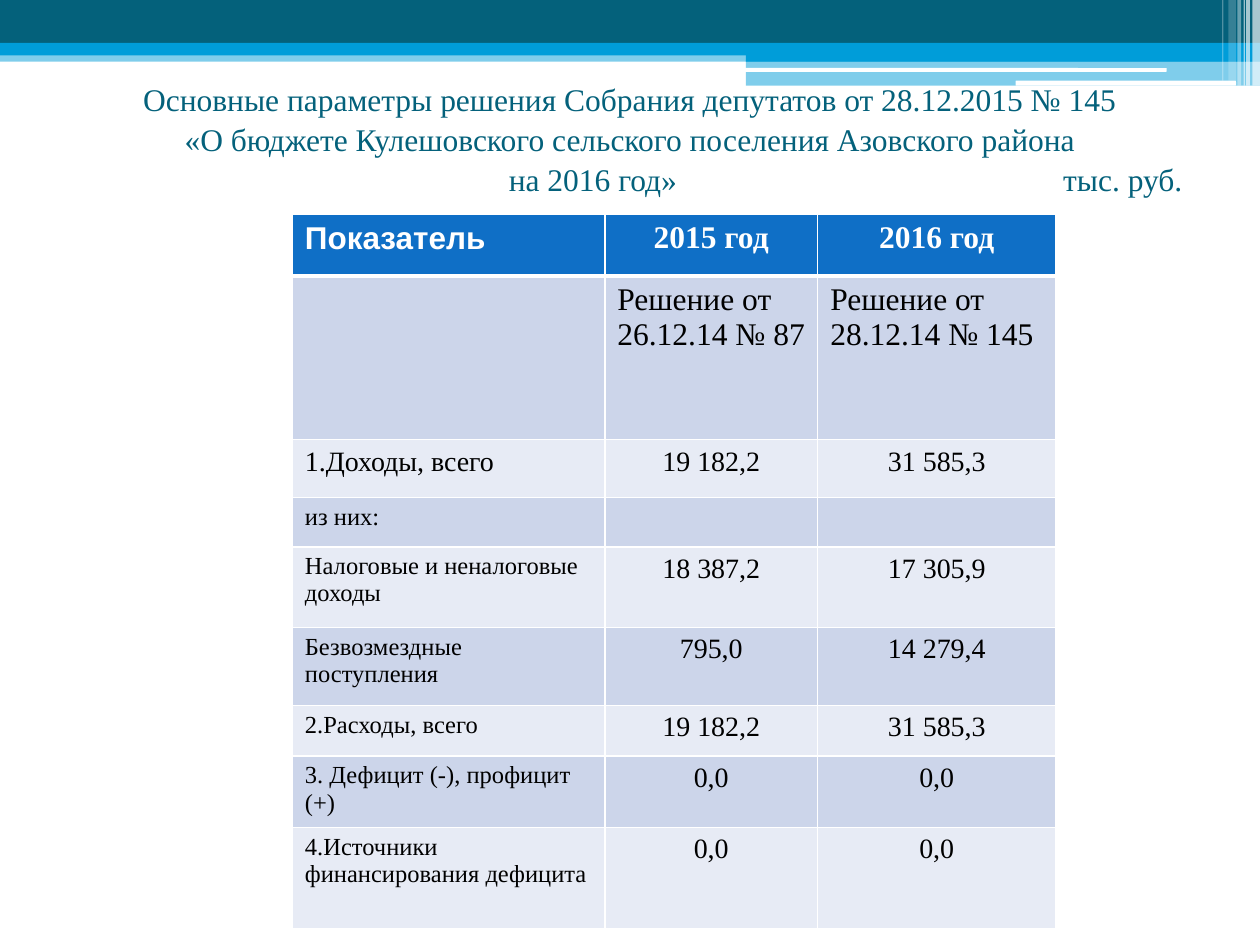
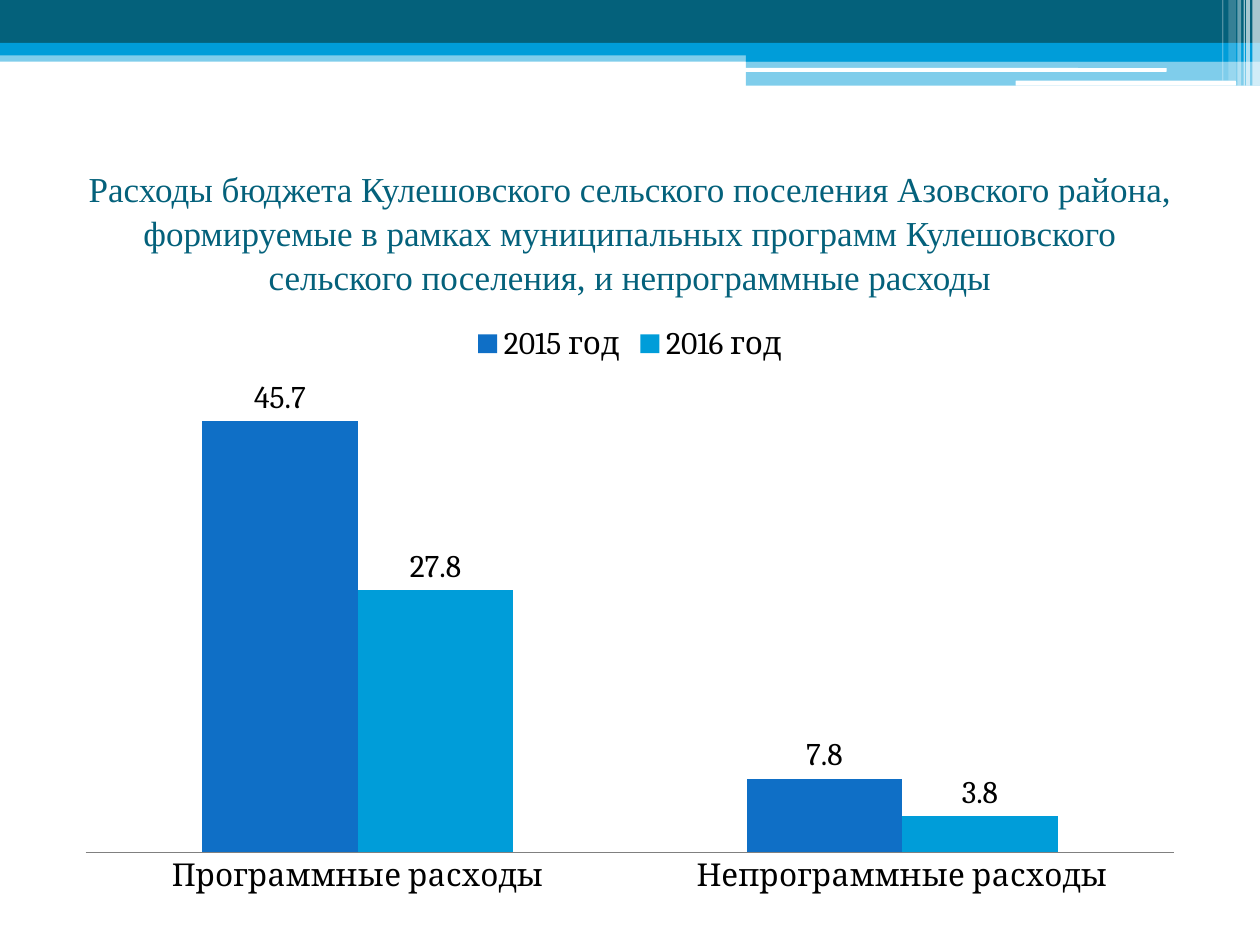
from lxml import etree
from pptx import Presentation
from pptx.chart.data import CategoryChartData
from pptx.dml.color import RGBColor
from pptx.enum.chart import (XL_CHART_TYPE, XL_LABEL_POSITION, XL_LEGEND_POSITION,
                             XL_TICK_MARK)
from pptx.enum.shapes import MSO_SHAPE
from pptx.enum.text import MSO_ANCHOR, PP_ALIGN
from pptx.oxml.ns import qn
from pptx.util import Inches, Pt

TEAL = RGBColor(0x04, 0x61, 0x7B)
SKY = RGBColor(0x00, 0x9D, 0xD9)
BLUE = RGBColor(0x0F, 0x6F, 0xC6)
DARK_ROW = RGBColor(0xCC, 0xD5, 0xEA)
LIGHT_ROW = RGBColor(0xE7, 0xEB, 0xF5)
AXIS_GRAY = RGBColor(0x80, 0x80, 0x80)
WHITE = RGBColor(0xFF, 0xFF, 0xFF)
BLACK = RGBColor(0x00, 0x00, 0x00)
SERIF = "Times New Roman"

# left, top, width, height, colour, opacity in percent
BANDS = [
    (0, 0.4, 10, 0.09, SKY, 50),
    (0, 0, 10, 0.34, TEAL, 100),
    (0, 0.34, 10, 0.1, SKY, 100),
    (5.92, 0.39, 4.08, 0.1, SKY, 100),
    (5.92, 0.48, 4.08, 0.2, SKY, 50),
]
WHITE_BARS = [(5.91, 0.54, 3.35, 0.03), (8.06, 0.64, 1.75, 0.04)]
# left, width, height, opacity in percent
STRIPES = [
    (9.94, 0.06, 0.68, 65),
    (9.89, 0.03, 0.68, 65),
    (9.87, 0.01, 0.68, 60),
    (9.82, 0.03, 0.68, 40),
    (9.75, 0.06, 0.64, 20),
    (9.7, 0.01, 0.64, 30),
]

BUDGET_TITLE = [
    "Основные параметры решения Собрания депутатов от 28.12.2015 № 145",
    "«О бюджете Кулешовского сельского поселения Азовского района",
    "\tна 2016 год»\tтыс. руб.",
]
UNIT_LINE_TABS = [3.44, 7.84]
COLUMN_WIDTHS = [2.48, 1.69, 1.89]
# row height, label size, cell texts
BUDGET_ROWS = [
    (0.49, 18, ["Показатель", "2015 год", "2016 год"]),
    (1.3, 18, ["", "Решение от 26.12.14 № 87", "Решение от 28.12.14 № 145"]),
    (0.46, 16, ["1.Доходы, всего", "19 182,2", "31 585,3"]),
    (0.39, 14, ["из них:", "", ""]),
    (0.64, 14, ["Налоговые и неналоговые доходы", "18 387,2", "17 305,9"]),
    (0.62, 14, ["Безвозмездные поступления", "795,0", "14 279,4"]),
    (0.4, 14, ["2.Расходы, всего", "19 182,2", "31 585,3"]),
    (0.57, 14, ["3. Дефицит (-), профицит (+)", "0,0", "0,0"]),
    (0.8, 14, ["4.Источники финансирования дефицита", "0,0", "0,0"]),
]

EXPENSES_TITLE = [
    "Расходы бюджета Кулешовского сельского поселения Азовского района, "
    "формируемые в рамках муниципальных программ Кулешовского сельского "
    "поселения, и непрограммные расходы"
]
EXPENSE_KINDS = ["Программные расходы", "Непрограммные расходы"]
EXPENSE_SERIES = [("2015 год", [45.7, 7.8], BLUE), ("2016 год", [27.8, 3.8], SKY)]


def style_font(font, size, color, name=SERIF, bold=False):
    font.size = Pt(size)
    font.name = name
    font.bold = bold
    font.color.rgb = color


def add_band(slide, left, top, width, height, color, opacity=100, kind=MSO_SHAPE.RECTANGLE):
    band = slide.shapes.add_shape(kind, Inches(left), Inches(top), Inches(width), Inches(height))
    band.shadow.inherit = False
    band.fill.solid()
    band.fill.fore_color.rgb = color
    band.line.fill.background()
    if opacity < 100:
        color_element = next(band.element.iter(qn("a:srgbClr")))
        etree.SubElement(color_element, qn("a:alpha"), val=str(opacity * 1000))


def add_header(slide):
    for band in BANDS:
        add_band(slide, *band)
    for bar in WHITE_BARS:
        add_band(slide, *bar, WHITE, kind=MSO_SHAPE.ROUNDED_RECTANGLE)
    for left, width, height, opacity in STRIPES:
        add_band(slide, left, 0, width, height, WHITE, opacity)


def add_title(slide, lines, top, height, size):
    """Add a centred title and return its text frame."""
    box = slide.shapes.add_textbox(Inches(0.5), Inches(top), Inches(9), Inches(height))
    frame = box.text_frame
    frame.word_wrap = True
    frame.vertical_anchor = MSO_ANCHOR.MIDDLE
    frame.text = "\n".join(lines)
    for paragraph in frame.paragraphs:
        paragraph.alignment = PP_ALIGN.CENTER
        paragraph.line_spacing = 1.05
        style_font(paragraph.font, size, TEAL)
    return frame


def set_tabs(paragraph, positions):
    """Left-align the paragraph and give it tab stops, in inches."""
    paragraph.alignment = PP_ALIGN.LEFT
    tabs = etree.Element(qn("a:tabLst"))
    for position in positions:
        etree.SubElement(tabs, qn("a:tab"), pos=str(Inches(position)), algn="l")
    properties = paragraph.font._element.getparent()
    properties.find(qn("a:defRPr")).addprevious(tabs)


def set_borders(cell, bottom_width):
    """Draw white borders, 1 pt but for the bottom one."""
    properties = cell._tc.get_or_add_tcPr()
    widths = {"a:lnL": 1, "a:lnR": 1, "a:lnT": 1, "a:lnB": bottom_width}
    for index, (tag, width) in enumerate(widths.items()):
        line = etree.Element(qn(tag), w=str(Pt(width)))
        fill = etree.SubElement(line, qn("a:solidFill"))
        etree.SubElement(fill, qn("a:srgbClr"), val=str(WHITE))
        properties.insert(index, line)


def fill_cell(cell, text, row, column, label_size):
    is_header = row == 0
    cell.fill.solid()
    cell.fill.fore_color.rgb = BLUE if is_header else DARK_ROW if row % 2 else LIGHT_ROW
    set_borders(cell, 3 if is_header else 1)
    cell.text = text
    paragraph = cell.text_frame.paragraphs[0]
    if column and row != 1:
        paragraph.alignment = PP_ALIGN.CENTER
    size = label_size if column == 0 else 18 if row < 2 else 16
    name = "Arial" if is_header and column == 0 else SERIF
    style_font(paragraph.font, size, WHITE if is_header else BLACK, name, is_header)


def add_budget_table(slide):
    table = slide.shapes.add_table(
        len(BUDGET_ROWS), len(COLUMN_WIDTHS),
        Inches(2.32), Inches(1.7), Inches(6.06), Inches(5.66)).table
    for column, width in zip(table.columns, COLUMN_WIDTHS):
        column.width = Inches(width)
    for row, (height, label_size, texts) in enumerate(BUDGET_ROWS):
        table.rows[row].height = Inches(height)
        for column, text in enumerate(texts):
            fill_cell(table.cell(row, column), text, row, column, label_size)


def add_expenses_chart(slide):
    data = CategoryChartData()
    data.categories = EXPENSE_KINDS
    for name, values, _ in EXPENSE_SERIES:
        data.add_series(name, values)
    chart = slide.shapes.add_chart(
        XL_CHART_TYPE.COLUMN_CLUSTERED,
        Inches(0.5), Inches(2.46), Inches(9), Inches(4.73), data).chart
    style_font(chart.font, 18, BLACK, "Cambria")
    chart.has_title = False
    chart.has_legend = True
    chart.legend.position = XL_LEGEND_POSITION.TOP
    chart.legend.include_in_layout = False

    chart.value_axis.visible = False
    chart.value_axis.has_major_gridlines = False
    chart.value_axis.minimum_scale = 0
    chart.category_axis.major_tick_mark = XL_TICK_MARK.NONE
    chart.category_axis.format.line.color.rgb = AXIS_GRAY

    plot = chart.plots[0]
    plot.gap_width = 150
    plot.overlap = 0
    plot.vary_by_categories = False
    plot.has_data_labels = True
    plot.data_labels.show_value = True
    plot.data_labels.position = XL_LABEL_POSITION.OUTSIDE_END
    for series, (_, _, color) in zip(plot.series, EXPENSE_SERIES):
        series.format.fill.solid()
        series.format.fill.fore_color.rgb = color


def add_slide(presentation):
    slide = presentation.slides.add_slide(presentation.slide_layouts[6])
    add_header(slide)
    return slide


def main():
    presentation = Presentation()
    presentation.slide_width = Inches(10)
    presentation.slide_height = Inches(7.5)

    budget_slide = add_slide(presentation)
    title = add_title(budget_slide, BUDGET_TITLE, 0.55, 1.09, 18)
    set_tabs(title.paragraphs[-1], UNIT_LINE_TABS)
    add_budget_table(budget_slide)

    expenses_slide = add_slide(presentation)
    add_title(expenses_slide, EXPENSES_TITLE, 1.25, 1.17, 20)
    add_expenses_chart(expenses_slide)

    presentation.save("out.pptx")


if __name__ == "__main__":
    main()
